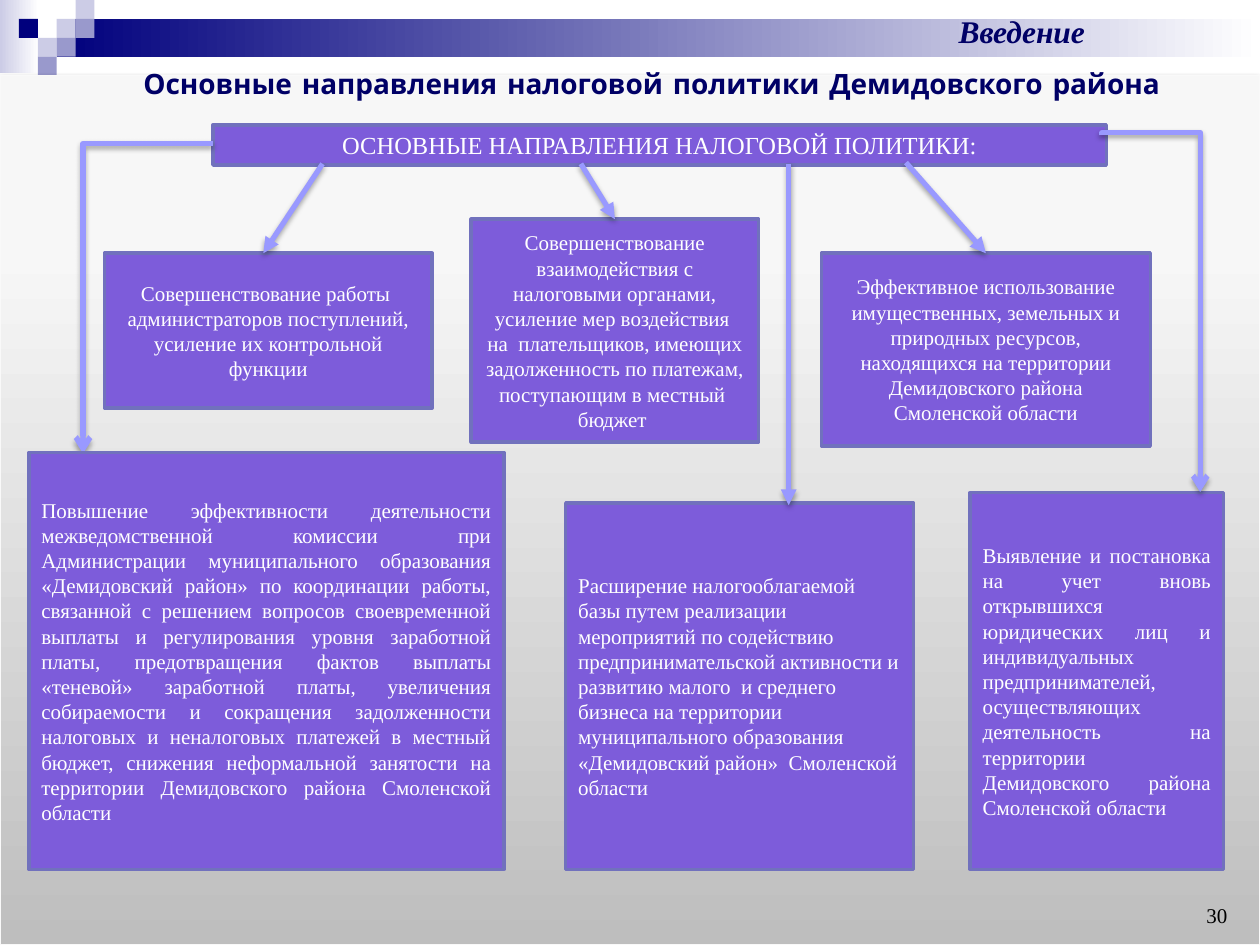
from pptx import Presentation
from pptx import util as u
from pptx.dml.color import RGBColor
from pptx.enum import shapes, text
from pptx.oxml import parse_xml
from pptx.oxml.ns import nsdecls

HEX = {"navy": "00007D", "pale": "CCCCE6", "mid": "9999CC", "white": "FFFFFF",
       "gray": "BEBEBE", "light": "F7F7F7", "edge": "F9F9F9", "box": "7D5CDA",
       "rim": "7171BD", "arrow": "9999FF", "head": "000066", "black": "000000"}
FONT = "Times New Roman"
MID, LEFT, JUST, RIGHT = (text.PP_ALIGN.CENTER, text.PP_ALIGN.LEFT,
                          text.PP_ALIGN.JUSTIFY, text.PP_ALIGN.RIGHT)
TOP, CENTER, LOW = (text.MSO_ANCHOR.TOP, text.MSO_ANCHOR.MIDDLE,
                    text.MSO_ANCHOR.BOTTOM)


def rgb(name):
    return RGBColor.from_string(HEX[name])


def write(shape, words, size=12, font=FONT, color="white", align=MID,
          anchor=CENTER, bold=False, italic=False):
    frame = shape.text_frame
    frame.word_wrap = True
    frame.auto_size = text.MSO_AUTO_SIZE.NONE
    frame.vertical_anchor = anchor
    para = frame.paragraphs[0]
    para.alignment = align
    run = para.add_run()
    run.text = words
    run.font.size, run.font.name = u.Pt(size), font
    run.font.bold, run.font.italic = bold, italic
    run.font.color.rgb = rgb(color)


def shade(shape):
    props = shape._element.spPr
    for old in props.findall("{*}effectLst"):
        props.remove(old)
    props.append(parse_xml(
        f'<a:effectLst {nsdecls("a")}><a:outerShdw blurRad="39370" dist="22860" '
        'dir="5400000" rotWithShape="0"><a:srgbClr val="000000">'
        '<a:alpha val="35000"/></a:srgbClr></a:outerShdw></a:effectLst>'))


class Page:
    def __init__(self, deck):
        self.slide = deck.slides.add_slide(deck.slide_layouts[5])
        self.items = self.slide.shapes

    def rect(self, at, fill, line=None, width=2, kind=shapes.MSO_SHAPE.RECTANGLE):
        shape = self.items.add_shape(kind, *map(u.Inches, at))
        shape.shadow.inherit = False
        shape.fill.solid()
        shape.fill.fore_color.rgb = rgb(fill)
        if line:
            shape.line.color.rgb = rgb(line)
            shape.line.width = u.Pt(width)
        else:
            shape.line.fill.background()
        return shape

    def fade(self, at, start, end, angle=0, stop=1, **style):
        shape = self.rect(at, start, **style)
        shape.fill.gradient()
        shape.fill.gradient_angle = angle
        for mark, name, pos in zip(shape.fill.gradient_stops, (start, end), (0, stop)):
            mark.color.rgb = rgb(name)
            mark.position = pos
        return shape

    def box(self, at, words, **style):
        shape = self.rect(at, "box", "rim")
        write(shape, words, **style)
        return shape

    def label(self, at, words, **style):
        write(self.items.add_textbox(*map(u.Inches, at)), words, **style)

    def title(self, at, words, **style):
        shape = self.items.title
        shape.left, shape.top, shape.width, shape.height = map(u.Inches, at)
        write(shape, words, **style)
        self.items._spTree.append(shape._element)  # bring to front

    def arrow(self, start, end, goal=None, bent=False):
        kind = shapes.MSO_CONNECTOR.ELBOW if bent else shapes.MSO_CONNECTOR.STRAIGHT
        line = self.items.add_connector(kind, *map(u.Inches, start + end))
        if goal:
            line.end_connect(goal, 0)
        line.line.color.rgb = rgb("arrow")
        line.line.width = u.Pt(3)
        tip = "arrow" if bent else "triangle"
        line.line._get_or_add_ln().append(
            parse_xml(f'<a:tailEnd {nsdecls("a")} type="{tip}"/>'))
        shade(line)
        return line


def main():
    deck = Presentation()
    deck.slide_width, deck.slide_height = u.Inches(10), u.Inches(7.5)
    page = Page(deck)

    # Header band and its mosaic of squares
    page.fade((0, 0, 0.31, 0.58), "pale", "white")
    page.fade((0.45, 0.15, 9.55, 0.3), "navy", "white")
    side = 0.15
    for col, row, tone in ((3, 1, "pale"), (4, 0, "pale"), (4, 1, "mid"),
                           (2, 2, "pale"), (1, 1, "navy"), (3, 2, "mid"),
                           (2, 3, "mid")):
        page.rect((col * side, row * side, side, side), tone)

    # Backdrop and page number
    back = page.fade((0, 0.6, 10, 6.9), "gray", "light", angle=90, stop=0.8,
                     line="edge", width=0.75,
                     kind=shapes.MSO_SHAPE.FLOWCHART_PROCESS)
    shade(back)
    page.label((7.51, 6.91, 2.33, 0.5), "30", color="black", align=RIGHT, anchor=LOW)

    # Boxes
    page.box((1.69, 0.99, 7.09, 0.32), "ОСНОВНЫЕ НАПРАВЛЕНИЯ НАЛОГОВОЙ ПОЛИТИКИ:", size=14)
    page.box((0.83, 2.01, 2.6, 1.23),
             "Совершенствование работы  администраторов поступлений, "
             "усиление их контрольной функции")
    debt = page.box((3.74, 1.74, 2.28, 1.77),
                    "Совершенствование взаимодействия с налоговыми органами, "
                    "усиление мер воздействия  на  плательщиков, имеющих "
                    "задолженность по платежам, поступающим в местный  бюджет ")
    page.box((4.49, 3.99, 2.76, 2.91),
             "Расширение налогооблагаемой базы путем реализации мероприятий "
             "по содействию предпринимательской активности и развитию малого  "
             "и среднего бизнеса на территории муниципального образования "
             "«Демидовский район»  Смоленской области", align=LEFT)
    land = page.box((6.52, 2.01, 2.61, 1.53),
                    "Эффективное использование имущественных, земельных и "
                    "природных ресурсов, находящихся на территории "
                    "Демидовского района Смоленской области")
    page.box((7.7, 3.91, 2.01, 2.99),
             "Выявление и постановка на учет вновь открывшихся  юридических "
             "лиц и индивидуальных предпринимателей, осуществляющих "
             "деятельность на территории  Демидовского района Смоленской "
             "области ", align=JUST)

    # Straight arrows
    for start, end, goal in (((2.56, 1.3), (2.09, 2.01), None),
                             ((4.61, 1.3), (4.88, 1.74), debt),
                             ((6.26, 1.3), (6.26, 4.01), None),
                             ((7.19, 1.29), (7.83, 2.01), land)):
        page.arrow(start, end, goal)

    # Elbow arrows: one corner on the left, a turned one on the right
    turn = page.arrow((1.69, 1.14), (0.66, 3.6), bent=True)
    turn._element.spPr.prstGeom.set("prst", "bentConnector2")
    turn = page.arrow((10.55, 2.1), (7.72, 2.88), bent=True)
    turn._element.spPr.xfrm.set("rot", "16200000")
    turn._element.spPr.prstGeom.get_or_add_avLst().append(
        parse_xml(f'<a:gd {nsdecls("a")} name="adj1" fmla="val -800"/>'))

    page.box((0.23, 3.59, 3.77, 3.31),
             "Повышение эффективности деятельности межведомственной комиссии "
             "при Администрации муниципального образования «Демидовский "
             "район» по координации работы, связанной с решением вопросов "
             "своевременной выплаты и регулирования уровня заработной платы, "
             "предотвращения фактов выплаты «теневой» заработной платы, "
             "увеличения собираемости и сокращения задолженности налоговых и "
             "неналоговых платежей в местный бюджет, снижения неформальной "
             "занятости на территории Демидовского района Смоленской области",
             align=JUST)

    # Headings
    page.label((6.26, 0.05, 3.7, 0.4), "Введение", size=18, color="head",
               anchor=TOP, bold=True, italic=True)
    page.title((0.93, 0.48, 8.49, 0.37),
               "Основные направления налоговой политики Демидовского района",
               size=16, font="Comic Neue", color="head", anchor=TOP, bold=True)

    deck.save("out.pptx")


if __name__ == "__main__":
    main()
